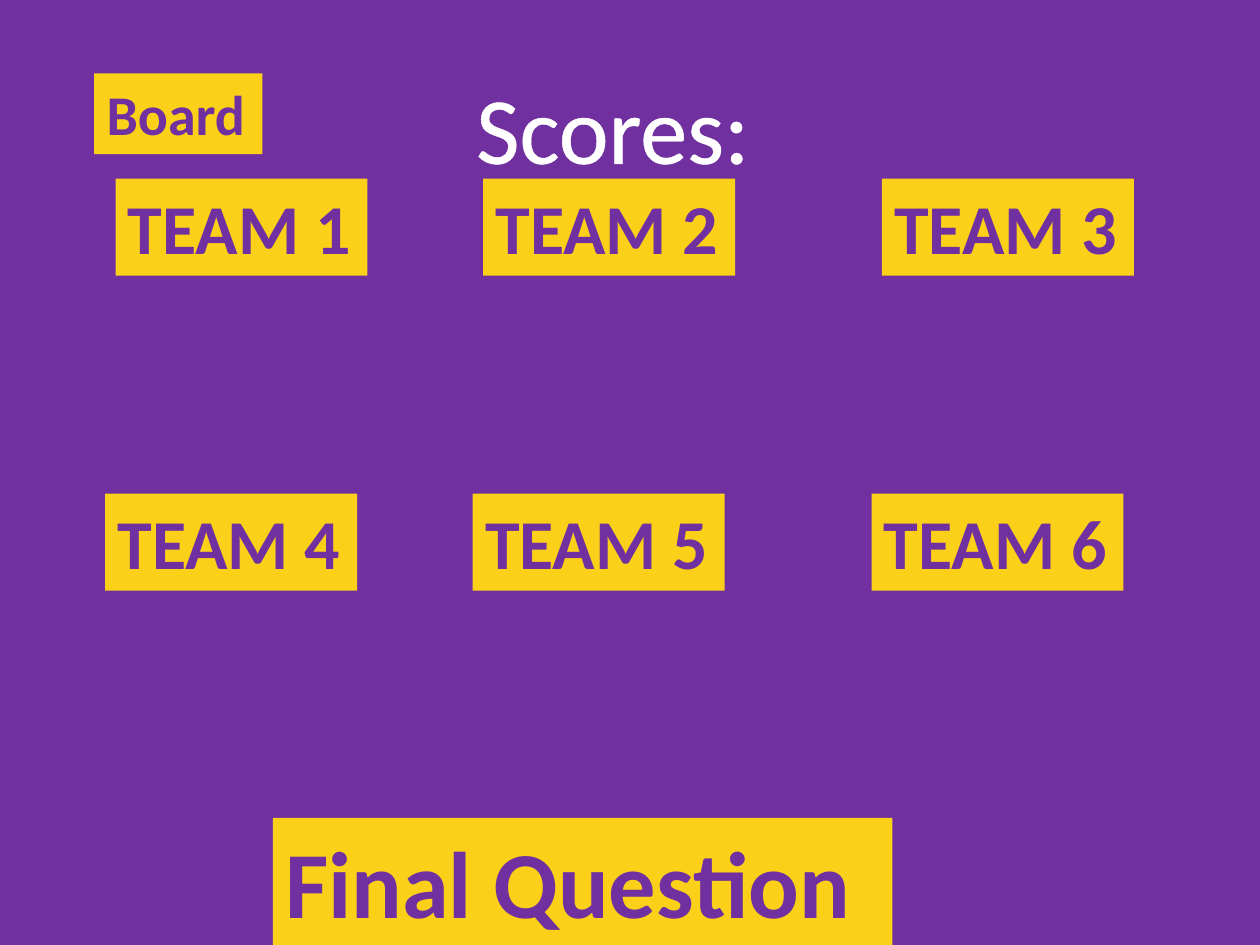
from lxml import etree
from pptx import Presentation, util as u
from pptx.dml.color import RGBColor
from pptx.enum import shapes, text
from pptx.oxml import ns

PURPLE, GOLD, WHITE = "7030A0", "FBD019", "FFFFFF"


def paint(fill, value):
    fill.solid()
    fill.fore_color.rgb = RGBColor.from_string(value)


class ScoreSlide:
    """Holds the look of the score slide and adds its elements."""

    font = "Calibri"

    def __init__(self, deck):
        self.slide = deck.slides.add_slide(deck.slide_layouts[5])
        paint(self.slide.background.fill, PURPLE)

    def add_words(self, frame, words, size, color, bold, align):
        frame.vertical_anchor = text.MSO_ANCHOR.TOP
        frame.auto_size = text.MSO_AUTO_SIZE.SHAPE_TO_FIT_TEXT
        paragraph = frame.paragraphs[0]
        paragraph.alignment = align
        run = paragraph.add_run()
        run.text = words
        run.font.name, run.font.size, run.font.bold = self.font, u.Pt(size), bold
        paint(run.font.fill, color)
        return run

    def title(self, words, left, top, width, height):
        heading = self.slide.shapes.title
        heading.left, heading.top = u.Cm(left), u.Cm(top)
        heading.width, heading.height = u.Cm(width), u.Cm(height)
        run = self.add_words(heading.text_frame, words, 54, WHITE, False, text.PP_ALIGN.CENTER)
        heading.text_frame.word_wrap = False
        outline = etree.Element(ns.qn("a:ln"), w=str(u.Pt(1.45)))
        solid = etree.SubElement(outline, ns.qn("a:solidFill"))
        etree.SubElement(solid, ns.qn("a:srgbClr"), val=WHITE)
        run._r.get_or_add_rPr().insert(0, outline)

    def box(self, words, size, left, top, width, height):
        label = self.slide.shapes.add_shape(
            shapes.MSO_SHAPE.RECTANGLE, u.Cm(left), u.Cm(top), u.Cm(width), u.Cm(height))
        label.shadow.inherit = False
        paint(label.fill, GOLD)
        label.line.fill.background()
        label.text_frame.word_wrap = True
        self.add_words(label.text_frame, words, size, PURPLE, True, text.PP_ALIGN.LEFT)


def main():
    deck = Presentation()
    deck.slide_width, deck.slide_height = u.Cm(25.4), u.Cm(19.05)
    scores = ScoreSlide(deck)
    scores.title("Scores:", 9.32, 1.27, 6.07, 2.57)
    scores.box("Board", 32, 1.9, 1.48, 3.39, 1.63)
    scores.box("Final Question", 54, 5.5, 16.49, 12.49, 2.57)
    team_columns = (2.33, 9.74, 17.78)
    team_rows = ((3.6, 0), (9.95, -0.21))
    for row, (top, shift) in enumerate(team_rows):
        for column, left in enumerate(team_columns):
            team = row * len(team_columns) + column + 1
            scores.box(f"TEAM {team}", 40, left + shift, top, 5.08, 1.96)
    deck.save("out.pptx")


if __name__ == "__main__":
    main()
